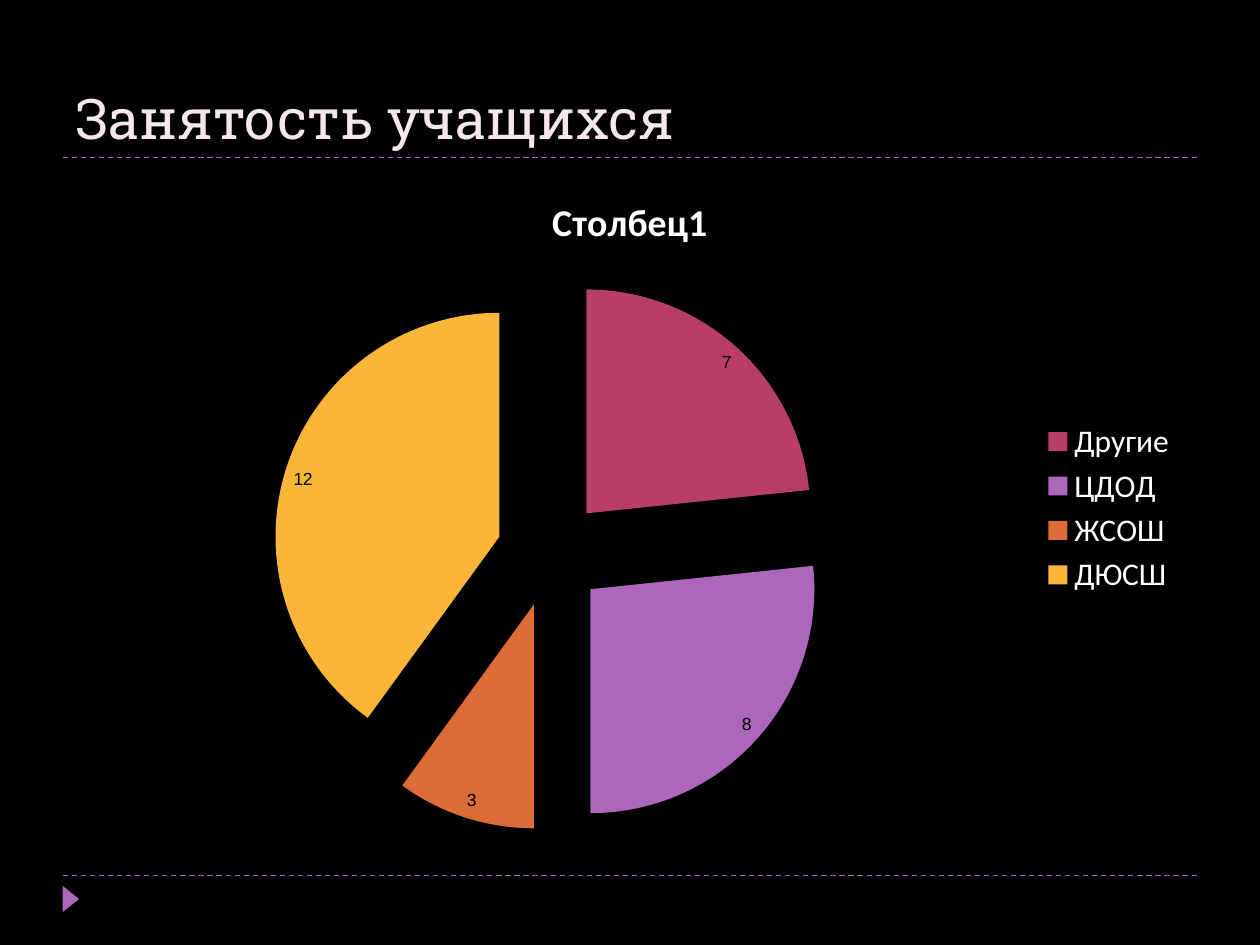
from lxml import etree
from pptx import Presentation
from pptx import util as u
from pptx.chart import data
from pptx.dml import color
from pptx.enum import chart as ch, dml, shapes, text
from pptx.oxml import ns

Pt = u.Pt
COLORS = {
    "background": "000000",
    "accent": "AC66BB",
    "title": "F4E7ED",
    "chart_text": "FFFFFF",
    "label": "000000",
}
STUDENTS = [
    ("Другие ", 7, "B83D68"),
    ("ЦДОД", 8, "AC66BB"),
    ("ЖСОШ", 3, "DE6C36"),
    ("ДЮСШ", 12, "F9B639"),
]


def paint(fill, hex_color):
    fill.solid()
    fill.fore_color.rgb = color.RGBColor.from_string(hex_color)


def style(font, name, size, hex_color, bold=False):
    font.name = name
    font.size = Pt(size)
    font.bold = bold
    font.color.rgb = color.RGBColor.from_string(hex_color)


prs = Presentation()
prs.slide_width, prs.slide_height = Pt(720), Pt(540)
slide = prs.slides.add_slide(prs.slide_layouts[5])
paint(slide.background.fill, COLORS["background"])

for y in (500.4, 90):
    rule = slide.shapes.add_connector(
        shapes.MSO_CONNECTOR.STRAIGHT, Pt(36), Pt(y), Pt(684), Pt(y))
    rule.line.color.rgb = color.RGBColor.from_string(COLORS["accent"])
    rule.line.width = Pt(0.75)
    rule.line.dash_style = dml.MSO_LINE.DASH
    etree.SubElement(rule._element.spPr, ns.qn("a:effectLst"))

marker = slide.shapes.add_shape(
    shapes.MSO_SHAPE.ISOSCELES_TRIANGLE, Pt(33), Pt(509), Pt(15), Pt(9.4))
marker.rotation = 90
marker.shadow.inherit = False
paint(marker.fill, COLORS["accent"])
marker.line.fill.background()

title = slide.shapes.title
title.left, title.top, title.width, title.height = Pt(36), Pt(12), Pt(648), Pt(78)
title.text_frame.text = "Занятость учащихся"
title.text_frame.vertical_anchor = text.MSO_ANCHOR.BOTTOM
heading = title.text_frame.paragraphs[0]
heading.alignment = text.PP_ALIGN.LEFT
style(heading.runs[0].font, "Roboto Slab", 32, COLORS["title"])

employment = data.CategoryChartData()
employment.categories = [name for name, _, _ in STUDENTS]
employment.add_series("Столбец1", [count for _, count, _ in STUDENTS])
pie = slide.shapes.add_chart(
    ch.XL_CHART_TYPE.PIE, Pt(36), Pt(96), Pt(648), Pt(388.8), employment).chart
style(pie.font, "Calibri", 18, COLORS["chart_text"])

pie.has_title = True
pie.chart_title.text_frame.text = "Столбец1"
caption = pie.chart_title.text_frame.paragraphs[0].runs[0]
style(caption.font, "Calibri", 21.6, COLORS["chart_text"], bold=True)

pie.has_legend = True
pie.legend.position = ch.XL_LEGEND_POSITION.RIGHT
pie.legend.include_in_layout = False
style(pie.legend.font, "Calibri", 18, COLORS["chart_text"])

plot = pie.plots[0]
plot.vary_by_categories = True
counts = plot.series[0]
for index, (_, _, hex_color) in enumerate(STUDENTS):
    paint(counts.points[index].format.fill, hex_color)

explosion = etree.Element(ns.qn("c:explosion"), val="24")
counts._element.find(ns.qn("c:dPt")).addprevious(explosion)

labels = counts.data_labels
labels.show_value = True
labels.position = ch.XL_LABEL_POSITION.INSIDE_END
style(labels.font, "Arial", 10, COLORS["label"])

prs.save("out.pptx")
